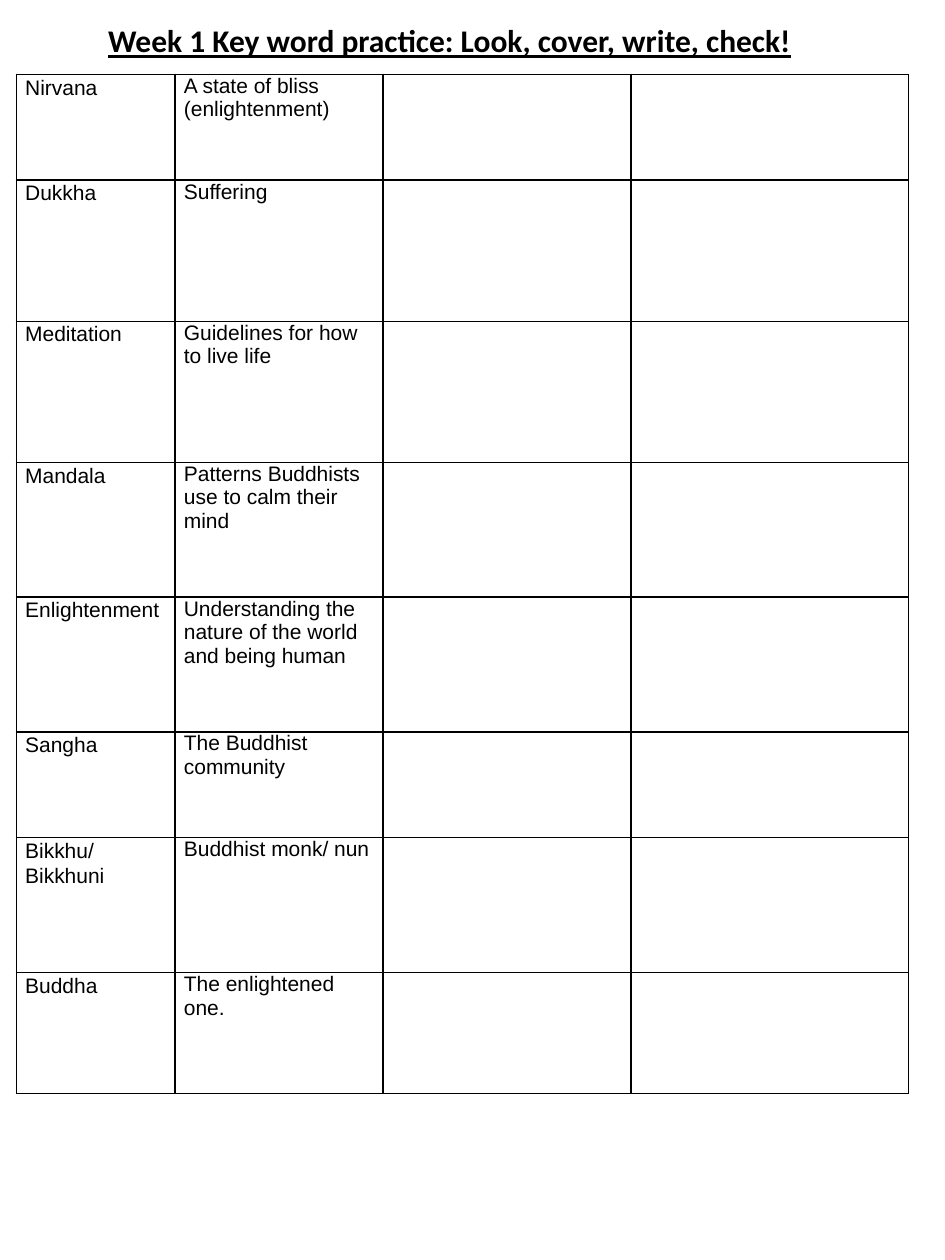
import pptx
import pptx.dml.color
import pptx.enum.text
import pptx.oxml
import pptx.oxml.ns
import pptx.util
from pptx.util import Inches

KEY_WORDS = [
    ("Nirvana", "A state of bliss (enlightenment)", 0.84),
    ("Dukkha", "Suffering", 1.12),
    ("Meditation", "Guidelines for how to live life", 1.12),
    ("Mandala", "Patterns Buddhists use to calm their mind", 1.07),
    ("Enlightenment", "Understanding the nature of the world and being human", 1.07),
    ("Sangha", "The Buddhist community", 0.84),
    ("Bikkhu/ Bikkhuni", "Buddhist monk/ nun", 1.07),
    ("Buddha", "The enlightened one.", 0.96),
]
COLUMN_WIDTHS = [1.26, 1.65, 1.97, 2.2]
BLACK = "000000"


def color(value):
    """Return the colour for a hex string."""
    return pptx.dml.color.RGBColor.from_string(value)


def write_text(frame, text, font="Arial", size=12, bold=False, underline=False, spacing=1.0):
    """Write one formatted paragraph into a text frame."""
    para = frame.paragraphs[0]
    para.line_spacing = spacing
    span = para.add_run()
    span.text = text
    span.font.name = font
    span.font.size = pptx.util.Pt(size)
    span.font.bold = bold
    span.font.underline = underline
    span.font.color.rgb = color(BLACK)


def add_title(page, text):
    """Add the underlined heading above the table."""
    box = page.shapes.add_textbox(Inches(0.76), Inches(0.12), Inches(5.83), Inches(0.4))
    box.text_frame.word_wrap = True
    box.text_frame.auto_size = pptx.enum.text.MSO_AUTO_SIZE.SHAPE_TO_FIT_TEXT
    write_text(box.text_frame, text, font="Calibri", size=18, bold=True, underline=True)


def format_cell(cell):
    """Give a cell its margins, black borders and no fill."""
    cell.margin_left = cell.margin_right = Inches(0.07)
    cell.margin_top = cell.margin_bottom = 0
    properties = cell._tc.get_or_add_tcPr()
    for side in ("lnL", "lnR", "lnT", "lnB"):
        properties.append(pptx.oxml.parse_xml(
            f'<a:{side} {pptx.oxml.ns.nsdecls("a")} w="{pptx.util.Pt(1)}">'
            f'<a:solidFill><a:srgbClr val="{BLACK}"/></a:solidFill></a:{side}>'
        ))
    cell.fill.background()


def add_practice_table(page):
    """Add the key words, their meanings and two empty practice columns."""
    heights = [height for _, _, height in KEY_WORDS]
    frame = page.shapes.add_table(
        len(KEY_WORDS), len(COLUMN_WIDTHS), Inches(0.13), Inches(0.59),
        Inches(sum(COLUMN_WIDTHS)), Inches(sum(heights)),
    )
    table = frame.table
    table.first_row = table.horz_banding = False
    for column, width in zip(table.columns, COLUMN_WIDTHS):
        column.width = Inches(width)
    for row, (word, meaning, height) in zip(table.rows, KEY_WORDS):
        row.height = Inches(height)
        for cell in row.cells:
            format_cell(cell)
        write_text(row.cells[0].text_frame, word, spacing=1.07)
        write_text(row.cells[1].text_frame, meaning)


def main():
    """Build and save the worksheet."""
    deck = pptx.Presentation()
    deck.slide_width, deck.slide_height = Inches(7.5), Inches(10)
    page = deck.slides.add_slide(deck.slide_layouts[6])
    add_practice_table(page)
    add_title(page, "Week 1 Key word practice: Look, cover, write, check!")
    deck.save("out.pptx")


if __name__ == "__main__":
    main()
